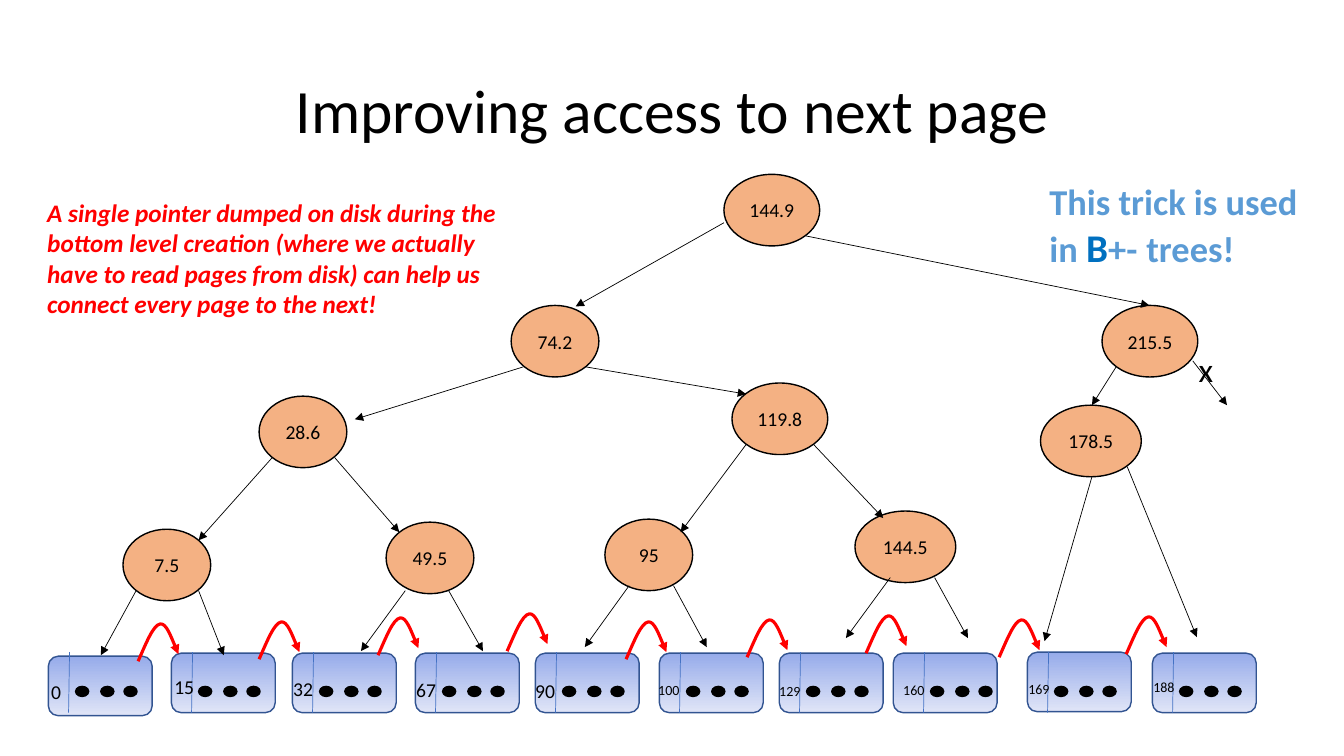
from lxml import etree
from pptx import Presentation
from pptx.dml.color import RGBColor
from pptx.enum.shapes import MSO_CONNECTOR, MSO_SHAPE
from pptx.enum.text import MSO_ANCHOR, MSO_AUTO_SIZE, PP_ALIGN
from pptx.oxml.ns import qn
from pptx.util import Inches, Pt

LINE = MSO_CONNECTOR.STRAIGHT
OVAL, ROUNDED = MSO_SHAPE.OVAL, MSO_SHAPE.ROUNDED_RECTANGLE
MIDDLE, CENTER = MSO_ANCHOR.MIDDLE, PP_ALIGN.CENTER
BLACK, RED, SKY, BLUE = "000000", "FF0000", "5B9BD5", "0070C0"

TITLE = "Improving access to next page"
POINTER_NOTE = (
    "A single pointer dumped on disk during the bottom level creation "
    "(where we actually have to read pages from disk) can help us "
    "connect every page to the next!"
)
TREE_NOTE = [  # text, size, colour, bold
    ("This trick is used in ", 26, SKY, True), ("B", 28, BLUE, True),
    ("+-", 26, SKY, True), (" ", 28, BLACK, False), ("trees!", 26, SKY, True),
]

# label, left, top, width, arrows to children (from x, from y, to x, to y)
NODES = [
    ("144.9", 7.18, 1.73, 0.95, [(7.18, 2.21, 5.71, 3.04), (7.99, 2.34, 11.4, 3.03)]),
    ("74.2", 5.07, 3.03, 0.87, [(5.19, 3.64, 3.52, 4.16), (5.81, 3.64, 7.4, 3.91)]),
    ("215.5", 10.93, 3.03, 0.95, [(11.07, 3.64, 10.83, 4.02), (11.83, 3.58, 12.17, 4.02)]),
    ("28.6", 2.57, 3.93, 0.87, [(2.7, 4.54, 1.97, 5.36), (3.32, 4.54, 3.96, 5.28)]),
    ("119.8", 7.26, 3.8, 0.95, [(7.4, 4.41, 6.75, 5.28), (8.07, 4.41, 8.76, 5.14)]),
    ("178.5", 10.32, 4.02, 1, [(10.83, 4.73, 10.36, 6.36), (11.18, 4.63, 11.87, 6.32)]),
    ("7.5", 1.22, 5.25, 0.87, [(1.35, 5.86, 1, 6.5), (1.97, 5.86, 2.22, 6.5)]),
    ("49.5", 3.83, 5.18, 0.87, [(4.02, 5.86, 3.58, 6.46), (4.45, 5.86, 4.79, 6.46)]),
    ("95", 6, 5.15, 0.87, [(6.24, 5.81, 5.8, 6.42), (6.68, 5.81, 7.01, 6.42)]),
    ("144.5", 8.48, 5.07, 1, [(8.83, 5.73, 8.39, 6.33), (9.27, 5.73, 9.6, 6.33)]),
]
NODE_HEIGHT = 0.71

# first key, page left, page top, divider x, key left, key top, key size
PAGES = [
    ("0", 0.48, 6.51, 0.69, 0.41, 6.7, 14),
    ("15", 1.7, 6.48, 1.91, 1.63, 6.65, 14),
    ("32", 2.9, 6.48, 3.11, 2.81, 6.67, 14),
    ("67", 4.12, 6.48, 4.33, 4.03, 6.68, 14),
    ("90", 5.31, 6.48, 5.52, 5.21, 6.69, 14),
    ("100", 6.54, 6.48, 6.75, 6.43, 6.71, 10),
    ("129", 7.73, 6.48, 7.94, 7.63, 6.72, 10),
    ("160", 8.86, 6.48, 9.17, 8.86, 6.71, 10),
    ("169", 10.19, 6.47, 10.4, 10.1, 6.7, 10),
    ("188", 11.43, 6.48, 11.64, 11.34, 6.68, 10),
]
DOT_OFFSETS = (0.06, 0.31, 0.54)

NEXT_PAGE_STARTS = [
    (1.37, 6.56), (2.57, 6.54), (3.75, 6.5), (5.03, 6.46), (6.21, 6.54),
    (7.41, 6.52), (8.59, 6.48), (9.91, 6.52), (11.17, 6.49),
]
# Two Bezier segments, three points each, relative to the start
NEXT_PAGE_CURVE = [
    (0.08, -0.18), (0.15, -0.36), (0.22, -0.37),
    (0.28, -0.38), (0.4, -0.07), (0.4, -0.07),
]


def rgb(color):
    return RGBColor.from_string(color)


def set_font(font, size, color=BLACK, bold=False, italic=False):
    font.name, font.size, font.bold, font.italic = "Calibri", Pt(size), bold, italic
    font.color.rgb = rgb(color)


def set_line(shape, color, width, arrow=False):
    shape.line.color.rgb = rgb(color)
    shape.line.width = Pt(width)
    if arrow:
        etree.SubElement(shape.line._get_or_add_ln(), qn("a:tailEnd"), type="triangle")


def add_preset(kind, left, top, width, height, fill, outline=BLACK):
    """Add a preset shape; a list of two fill colours makes a vertical gradient."""
    shape = slide.shapes.add_shape(kind, *map(Inches, (left, top, width, height)))
    shape.shadow.inherit = False
    if isinstance(fill, list):
        shape.fill.gradient()
        shape.fill.gradient_angle = 270
        for stop, color, position in zip(shape.fill.gradient_stops, fill, (0, 1)):
            stop.color.rgb = rgb(color)
            stop.position = position
    else:
        shape.fill.solid()
        shape.fill.fore_color.rgb = rgb(fill)
    set_line(shape, outline, 1)
    return shape


def add_line(ends, color, arrow=False):
    line = slide.shapes.add_connector(LINE, *map(Inches, ends))
    set_line(line, color, 0.5, arrow)
    etree.SubElement(line._element.spPr, qn("a:effectLst"))


def add_text(left, top, width, height, text="", wrap=True, **font):
    box = slide.shapes.add_textbox(*map(Inches, (left, top, width, height)))
    box.text_frame.word_wrap = wrap
    paragraph = box.text_frame.paragraphs[0]
    if text:
        paragraph.text = text
        set_font(paragraph.font, **font)
    return paragraph


def add_next_page_arrow(x, y):
    builder = slide.shapes.build_freeform(Inches(x), Inches(y))
    builder.add_line_segments(
        [(Inches(x + dx), Inches(y + dy)) for dx, dy in NEXT_PAGE_CURVE], close=False
    )
    arrow = builder.convert_to_shape()
    segments = list(arrow._element.iter(qn("a:lnTo")))
    path = segments[0].getparent()
    for first in range(0, len(segments), 3):
        curve = etree.SubElement(path, qn("a:cubicBezTo"))
        for segment in segments[first:first + 3]:
            curve.append(segment[0])
            path.remove(segment)
    arrow.shadow.inherit = False
    arrow.fill.background()
    set_line(arrow, RED, 2.25, arrow=True)


prs = Presentation()
prs.slide_width, prs.slide_height = Inches(13.33), Inches(7.5)
slide = prs.slides.add_slide(prs.slide_layouts[5])

title = slide.shapes.title
title.left, title.top, title.width, title.height = map(Inches, (0.92, 0.4, 11.5, 1.45))
title.text_frame.text = TITLE
title.text_frame.auto_size = MSO_AUTO_SIZE.NONE
title.text_frame.vertical_anchor = MIDDLE
heading = title.text_frame.paragraphs[0]
heading.alignment, heading.line_spacing = CENTER, 0.9
set_font(heading.font, 44)

for key, left, top, divider, key_left, key_top, key_size in PAGES:
    add_preset(ROUNDED, left, top, 1.03, 0.59, ["96ABEA", "E0E5F7"], "325491")
    add_line((divider, 6.47, divider - 0.01, 7.07), "4472C4")
    for offset in DOT_OFFSETS:
        add_preset(OVAL, divider + offset, 6.81, 0.13, 0.1, BLACK)
    add_text(key_left, key_top, 0.59, 0.3, key, size=key_size)

for label, left, top, width, _ in NODES:
    node = add_preset(OVAL, left, top, width, NODE_HEIGHT, "F4B183")
    frame = node.text_frame
    frame.margin_left = frame.margin_right = 0
    frame.word_wrap = False
    frame.vertical_anchor = MIDDLE
    frame.text = label
    frame.paragraphs[0].alignment = CENTER
    set_font(frame.paragraphs[0].font, 14)

for *_, child_arrows in NODES:
    for ends in child_arrows:
        add_line(ends, BLACK, arrow=True)

add_text(11.79, 3.41, 0.34, 0.5, "x", size=24)
add_text(0.37, 1.91, 4.78, 1.31, POINTER_NOTE, size=18, color=RED, bold=True, italic=True)

for start in NEXT_PAGE_STARTS:
    add_next_page_arrow(*start)

tree_note = add_text(10.31, 1.73, 2.91, 1.01)
for text, size, color, bold in TREE_NOTE:
    run = tree_note.add_run()
    run.text = text
    set_font(run.font, size, color, bold)

prs.save("out.pptx")
